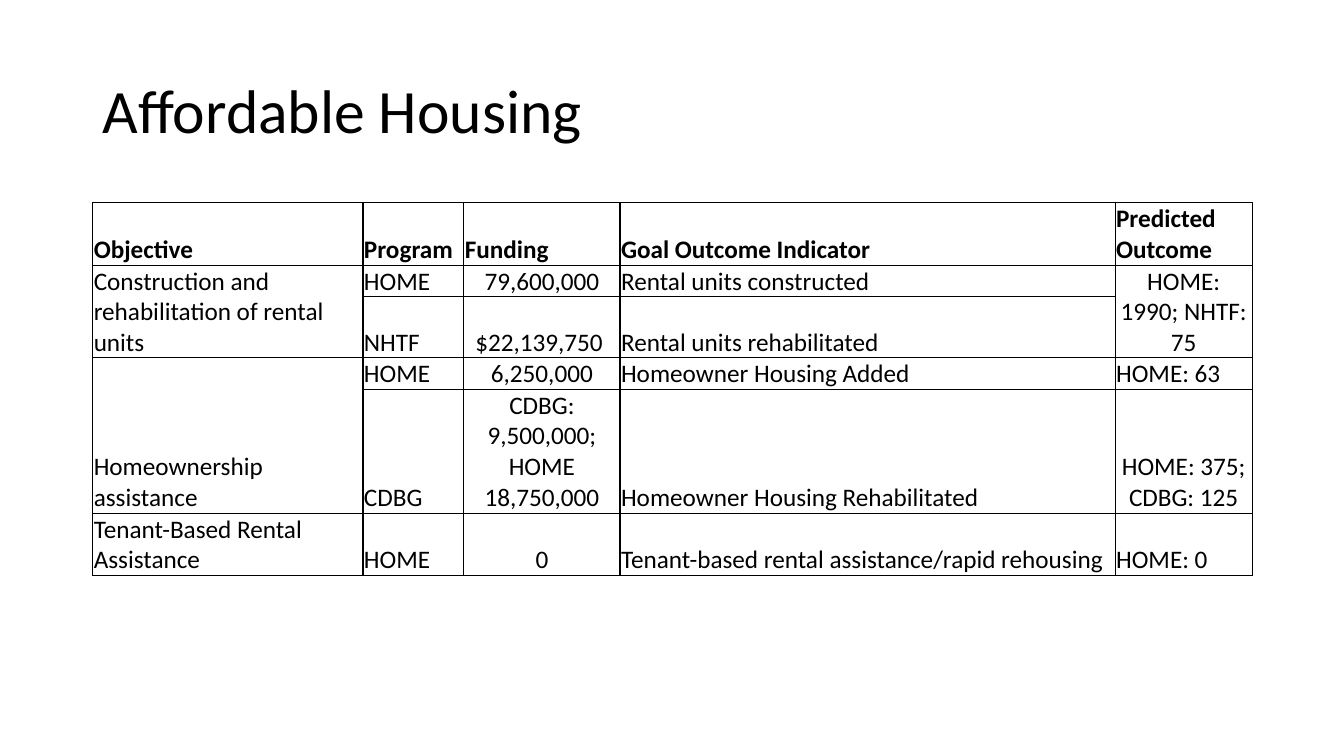
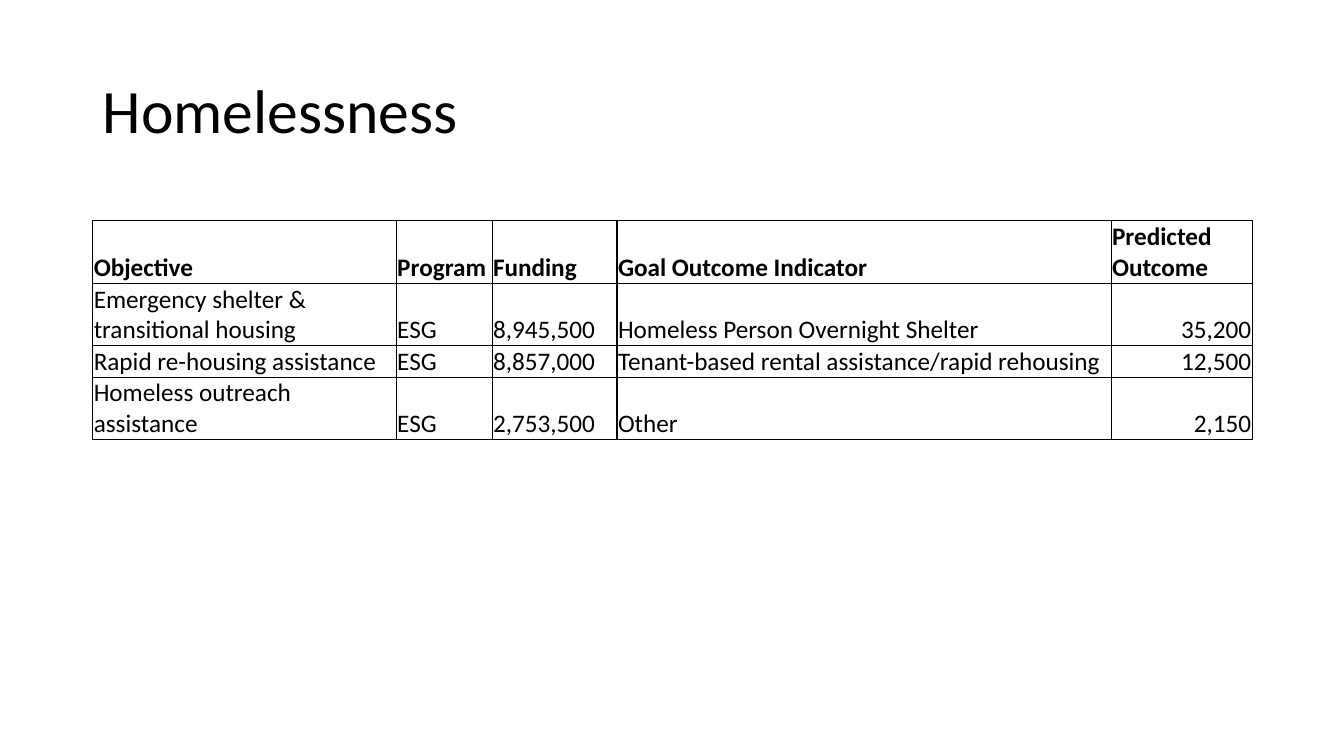
from lxml import etree
from pptx import Presentation
from pptx import util as u
from pptx.dml.color import RGBColor
from pptx.enum import text
from pptx.oxml import ns

PX = 9144
SLIDE_SIZE = (1333, 750)
LEFT = 92
TITLE_BOX = (LEFT, 40, 1150, 145)
FONT = "Calibri"
INK = "000000"
THIN, THICK = 0.5, 1
ALIGN = {
    "l": text.PP_ALIGN.LEFT,
    "c": text.PP_ALIGN.CENTER,
    "r": text.PP_ALIGN.RIGHT,
}
CELL_FORMAT = {
    "vertical_anchor": text.MSO_ANCHOR.BOTTOM,
    "margin_left": PX,
    "margin_right": PX,
    "margin_top": PX,
    "margin_bottom": 0,
}
TITLE_FORMAT = {"word_wrap": True, "vertical_anchor": text.MSO_ANCHOR.MIDDLE}
HEADER = ("Objective", "Program", "Funding", "Goal Outcome Indicator", "Predicted Outcome")

SECTIONS = [
    {
        "title": "Affordable Housing",
        "top": 201,
        "top_border": THICK,
        "widths": (268, 100, 155, 491, 136),
        "heights": (62, 31, 61, 31, 123, 62),
        "aligns": ("lllll", "llclc", "llclc", "llcll", "llclc", "llcll"),
        "goals": [
            ("Construction and rehabilitation of rental units", "HOME", "79,600,000",
             "Rental units constructed", "HOME: 1990; NHTF: 75"),
            (None, "NHTF", "$22,139,750 ", "Rental units rehabilitated", None),
            ("Homeownership assistance", "HOME", "6,250,000",
             "Homeowner Housing Added", "HOME: 63"),
            (None, "CDBG", "CDBG: 9,500,000; HOME 18,750,000",
             "Homeowner Housing Rehabilitated", "HOME: 375; CDBG: 125"),
            ("Tenant-Based Rental Assistance", "HOME", "0",
             "Tenant-based rental assistance/rapid rehousing", "HOME: 0"),
        ],
    },
    {
        "title": "Homelessness",
        "top": 219,
        "top_border": THIN,
        "widths": (301, 95, 124, 490, 140),
        "heights": (62, 62, 31, 62),
        "aligns": ("lllll", "llllr", "llllr", "llllr"),
        "goals": [
            ("Emergency shelter & transitional housing", "ESG", "8,945,500",
             "Homeless Person Overnight Shelter", "35,200"),
            ("Rapid re-housing assistance", "ESG", "8,857,000",
             "Tenant-based rental assistance/rapid rehousing", "12,500"),
            ("Homeless outreach assistance", "ESG", "2,753,500", "Other", "2,150"),
        ],
    },
]


def px(*lengths):
    return [length * PX for length in lengths]


def color(value):
    return RGBColor.from_string(value)


def apply(target, formats):
    for name, value in formats.items():
        setattr(target, name, value)


def write(paragraph, words, size, bold=False):
    run = paragraph.add_run()
    run.text = words
    apply(run.font, {"name": FONT, "size": u.Pt(size), "bold": bold})
    run.font.color.rgb = color(INK)


def add_title(slide, words):
    frame = slide.shapes.add_textbox(*px(*TITLE_BOX)).text_frame
    apply(frame, TITLE_FORMAT)
    frame.paragraphs[0].line_spacing = 0.9
    write(frame.paragraphs[0], words, 44)


def set_borders(cell, points):
    properties = cell._tc.get_or_add_tcPr()
    for place, (side, width) in enumerate(points.items()):
        line = etree.Element(ns.qn(f"a:ln{side}"), w=str(u.Pt(width)))
        fill = etree.SubElement(line, ns.qn("a:solidFill"))
        etree.SubElement(fill, ns.qn("a:srgbClr"), val=INK)
        properties.insert(place, line)


def format_cell(cell, row, column, top_border):
    apply(cell, CELL_FORMAT)
    cell.fill.background()
    set_borders(cell, {
        "L": THICK if column in (0, 1, 3) else THIN,
        "R": THICK if column in (0, 2, 4) else THIN,
        "T": top_border if row == 0 else THIN,
        "B": THIN,
    })


def add_goals(slide, section):
    widths, heights = section["widths"], section["heights"]
    table = slide.shapes.add_table(
        len(heights), len(widths),
        *px(LEFT, section["top"], sum(widths), sum(heights))).table
    apply(table, {"first_row": False, "horz_banding": False})
    for column, width in zip(table.columns, px(*widths)):
        column.width = width
    for row, height in zip(table.rows, px(*heights)):
        row.height = height
    for r, goal in enumerate([HEADER, *section["goals"]]):
        for c, words in enumerate(goal):
            cell = table.cell(r, c)
            format_cell(cell, r, c, section["top_border"])
            if words is None:
                table.cell(r - 1, c).merge(cell)
                continue
            paragraph = cell.text_frame.paragraphs[0]
            paragraph.alignment = ALIGN[section["aligns"][r][c]]
            write(paragraph, words, 18, bold=r == 0)


def main():
    deck = Presentation()
    deck.slide_width, deck.slide_height = px(*SLIDE_SIZE)
    for section in SECTIONS:
        slide = deck.slides.add_slide(deck.slide_layouts[6])
        add_title(slide, section["title"])
        add_goals(slide, section)
    deck.save("out.pptx")


if __name__ == "__main__":
    main()
